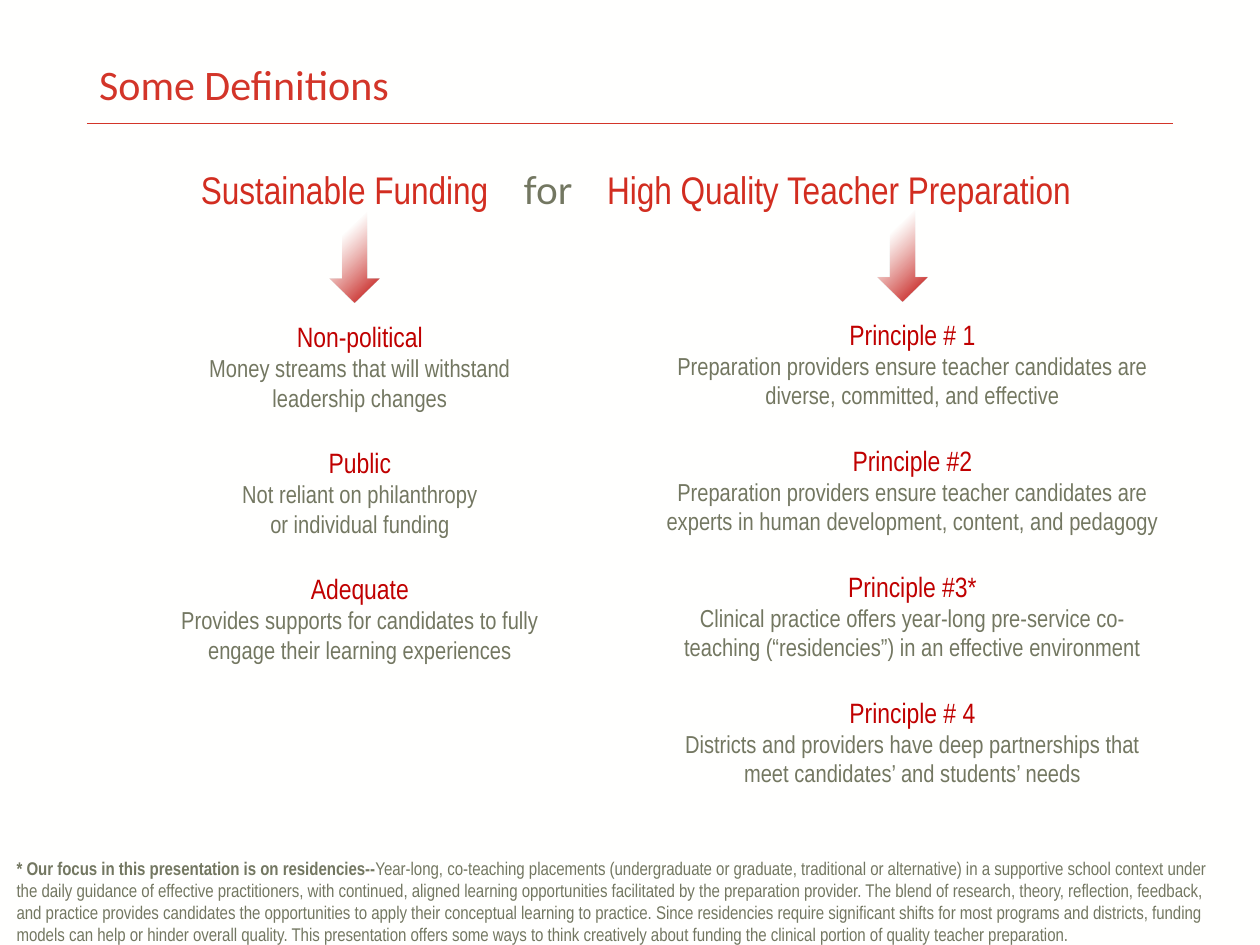
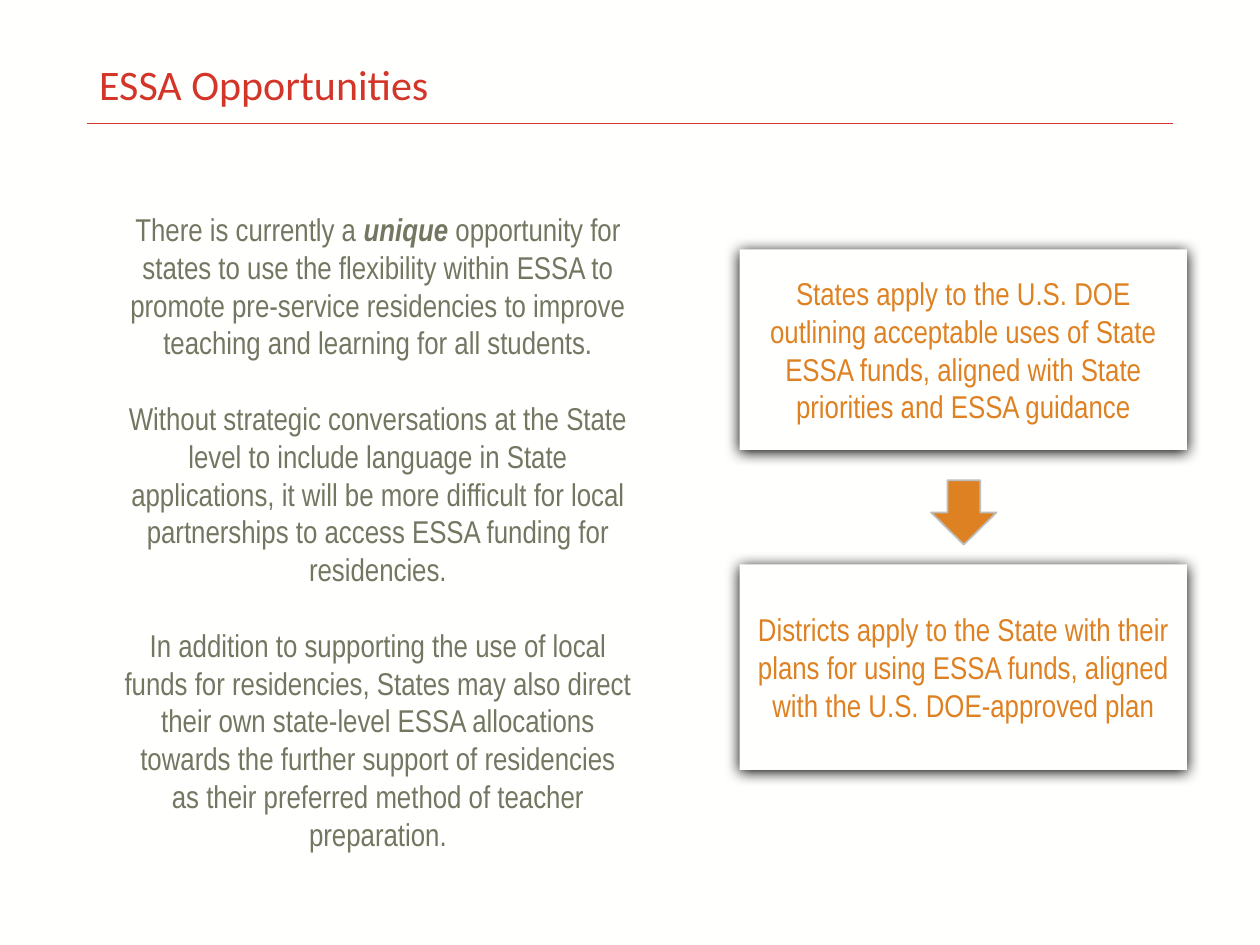
from dataclasses import dataclass
from typing import NamedTuple, Optional

from lxml.etree import SubElement
from pptx import Presentation
from pptx.dml.color import RGBColor
from pptx.enum.shapes import MSO_CONNECTOR, MSO_SHAPE
from pptx.enum.text import MSO_ANCHOR, PP_ALIGN
from pptx.oxml.ns import qn
from pptx.shapes.autoshape import Shape
from pptx.slide import Slide
from pptx.text.text import TextFrame
from pptx.util import Cm, Pt


@dataclass(frozen=True)
class Theme:
    background: RGBColor = RGBColor(0xFF, 0xFF, 0xFE)
    title: RGBColor = RGBColor(0xD3, 0x35, 0x29)
    headline: RGBColor = RGBColor(0xD2, 0x2D, 0x20)
    heading: RGBColor = RGBColor(0xC0, 0x00, 0x00)
    arrow_fade: RGBColor = RGBColor(0xC8, 0x32, 0x27)
    body: RGBColor = RGBColor(0x73, 0x77, 0x61)
    accent: RGBColor = RGBColor(0xDE, 0x81, 0x22)
    outline: RGBColor = RGBColor(0xBD, 0xBD, 0xBC)
    title_font: str = "Calibri"
    body_font: str = "Arial Narrow"
    link_font: str = "Lato"
    title_size: float = 24
    headline_size: float = 22
    large_size: float = 18
    heading_size: float = 16
    detail_size: float = 14
    footnote_size: float = 10.5
    line_height: float = 1.2


THEME = Theme()


class Box(NamedTuple):
    """Left, top, width and height in centimetres."""
    left: float
    top: float
    width: float
    height: float

    def lengths(self) -> tuple[Cm, ...]:
        return tuple(Cm(value) for value in self)


class Span(NamedTuple):
    text: str
    bold: Optional[bool] = None
    italic: Optional[bool] = None
    color: Optional[RGBColor] = None
    font: Optional[str] = None


class Line(NamedTuple):
    spans: tuple[Span, ...]
    size: float
    color: RGBColor
    font: str = THEME.body_font
    align: PP_ALIGN = PP_ALIGN.CENTER
    space_before: float = 0
    spacing: Optional[float] = None
    tabs: tuple[float, ...] = ()


class Topic(NamedTuple):
    heading: str
    details: tuple[str, ...]


class Column(NamedTuple):
    box: Box
    arrow: Box
    topics: tuple[Topic, ...]


class Card(NamedTuple):
    box: Box
    text: str


# Slide content
HEADLINE = Line(
    (Span("Sustainable Funding\t"),
     Span("for\t", color=THEME.body, font=THEME.link_font),
     Span("High Quality Teacher Preparation")),
    THEME.headline_size, THEME.headline, align=PP_ALIGN.LEFT, spacing=0.9, tabs=(6.5, 8.19))

COLUMNS = (
    Column(Box(3.28, 6.32, 7.95, 7.4), Box(6.65, 4.22, 0.99, 1.88), (
        Topic("Non-political", ("Money streams that will withstand leadership changes",)),
        Topic("Public", ("Not reliant on philanthropy", "or individual funding")),
        Topic("Adequate", ("Provides supports for candidates to fully engage their "
                           "learning experiences",)))),
    Column(Box(13.11, 6.27, 10.57, 10), Box(17.7, 4.19, 0.99, 1.88), (
        Topic("Principle # 1", ("Preparation providers ensure teacher candidates are "
                                "diverse, committed, and effective",)),
        Topic("Principle #2", ("Preparation providers ensure teacher candidates are experts "
                               "in human development, content, and pedagogy",)),
        Topic("Principle #3*", ("Clinical practice offers year-long pre-service co-teaching "
                                "(“residencies”) in an effective environment",)),
        Topic("Principle # 4", ("Districts and providers have deep partnerships that meet "
                                "candidates’ and students’ needs",)))))

FOOTNOTE = Line(
    (Span("* Our focus in this presentation is on residencies--", bold=True),
     Span("Year-long, co-teaching placements (undergraduate or graduate, traditional or "
          "alternative) in a supportive school context under the daily guidance of effective "
          "practitioners, with continued, aligned learning opportunities facilitated by the "
          "preparation provider. The blend of research, theory, reflection, feedback, and "
          "practice provides candidates the opportunities to apply their conceptual learning "
          "to practice. Since residencies require significant shifts for most programs and "
          "districts, funding models can help or hinder overall quality. This presentation "
          "offers some ways to think creatively about funding the clinical portion of quality "
          "teacher preparation.")),
    THEME.footnote_size, THEME.body, align=PP_ALIGN.LEFT)

OPPORTUNITIES = (
    (Span("There is currently a "), Span("unique", bold=True, italic=True),
     Span(" opportunity for states to use the flexibility within ESSA to promote pre-service "
          "residencies to improve teaching and learning for all students.")),
    (Span("Without strategic conversations at the State level to include language in State "
          "applications, it will be more difficult for local partnerships to access ESSA "
          "funding for residencies."),),
    (Span("In addition to supporting the use of local funds for residencies, States may also "
          "direct their own state-level ESSA allocations towards the further support of "
          "residencies as their preferred method of teacher preparation."),))

CARDS = (
    Card(Box(14.91, 5.03, 9.02, 4.04),
         "States apply to the U.S. DOE outlining acceptable uses of State ESSA funds, aligned "
         "with State priorities and ESSA guidance"),
    Card(Box(14.91, 11.38, 9.02, 4.14),
         "Districts apply to the State with their plans for using ESSA funds, aligned with the "
         "U.S. DOE-approved plan"))


# Text
def write_lines(frame: TextFrame, lines: list[Line], anchor: MSO_ANCHOR) -> None:
    frame.word_wrap = True
    frame.vertical_anchor = anchor
    for index, line in enumerate(lines):
        paragraph = frame.add_paragraph() if index else frame.paragraphs[0]
        paragraph.alignment = line.align
        if line.spacing:
            paragraph.line_spacing = line.spacing
        if index and line.space_before:
            paragraph.space_before = Pt(line.space_before)
        if line.tabs:
            tab_list = SubElement(paragraph._p.get_or_add_pPr(), qn("a:tabLst"))
            for position in line.tabs:
                SubElement(tab_list, qn("a:tab"), pos=str(Cm(position)), algn="l")
        uniform_font = all(span.font is None for span in line.spans)
        uniform_color = all(span.color is None for span in line.spans)
        paragraph.font.size = Pt(line.size)
        if uniform_font:
            paragraph.font.name = line.font
        if uniform_color:
            paragraph.font.color.rgb = line.color
        for span in line.spans:
            run = paragraph.add_run()
            run.text = span.text
            run.font.bold, run.font.italic = span.bold, span.italic
            if not uniform_font:
                run.font.name = span.font or line.font
            if not uniform_color:
                run.font.color.rgb = span.color or line.color


def add_text(slide: Slide, box: Box, lines: list[Line],
             anchor: MSO_ANCHOR = MSO_ANCHOR.TOP) -> Shape:
    shape = slide.shapes.add_textbox(*box.lengths())
    write_lines(shape.text_frame, lines, anchor)
    return shape


def topic_lines(topics: tuple[Topic, ...]) -> list[Line]:
    gap = THEME.heading_size * THEME.line_height
    lines = []
    for topic in topics:
        lines.append(Line((Span(topic.heading),), THEME.heading_size, THEME.heading,
                          space_before=gap))
        lines += [Line((Span(detail),), THEME.detail_size, THEME.body)
                  for detail in topic.details]
    return lines


# Shapes
def add_filled_shape(slide: Slide, kind: MSO_SHAPE, box: Box, color: RGBColor) -> Shape:
    shape = slide.shapes.add_shape(kind, *box.lengths())
    shape.shadow.inherit = False
    shape.fill.solid()
    shape.fill.fore_color.rgb = color
    shape.line.fill.background()
    return shape


def add_fading_arrow(slide: Slide, box: Box) -> None:
    arrow = add_filled_shape(slide, MSO_SHAPE.DOWN_ARROW, box, THEME.heading)
    arrow.fill.gradient()
    arrow.fill.gradient_angle = 315
    stops = arrow.fill.gradient_stops
    for stop, position, color in zip(stops, (0.27, 1), (THEME.arrow_fade, THEME.heading)):
        stop.position = position
        stop.color.rgb = color
    first_color = next(arrow._element.spPr.iter(qn("a:srgbClr")))
    SubElement(first_color, qn("a:alpha"), val="0")


def add_card(slide: Slide, card: Card) -> None:
    shape = add_filled_shape(slide, MSO_SHAPE.RECTANGLE, card.box, THEME.background)
    effects = shape._element.spPr.find(qn("a:effectLst"))
    shadow = SubElement(effects, qn("a:outerShdw"), blurRad=str(Pt(8.5)), dist=str(Pt(1)),
                        dir="5400000", algn="t", rotWithShape="0")
    SubElement(shadow, qn("a:srgbClr"), val="000000")
    write_lines(shape.text_frame, [Line((Span(card.text),), THEME.large_size, THEME.accent)],
                MSO_ANCHOR.MIDDLE)


# Shared slide frame
def add_titled_slide(presentation: Presentation, title: str) -> Slide:
    slide = presentation.slides.add_slide(presentation.slide_layouts[6])
    slide.background.fill.solid()
    slide.background.fill.fore_color.rgb = THEME.background
    rule = slide.shapes.add_connector(MSO_CONNECTOR.STRAIGHT, Cm(1.75), Cm(2.49),
                                      Cm(23.65), Cm(2.49))
    rule.line.color.rgb = THEME.title
    rule.line.width = Pt(0.75)
    SubElement(rule._element.spPr, qn("a:effectLst"))
    title_line = Line((Span(title),), THEME.title_size, THEME.title, THEME.title_font,
                      PP_ALIGN.LEFT, spacing=0.9)
    add_text(slide, Box(1.75, 1.02, 21.9, 1.47), [title_line], MSO_ANCHOR.MIDDLE)
    return slide


def build_definitions(presentation: Presentation) -> None:
    slide = add_titled_slide(presentation, "Some Definitions")
    headline = add_text(slide, Box(4.05, 3.33, 20, 1.3), [HEADLINE])
    headline.text_frame.margin_left = 0
    for column in COLUMNS:
        add_text(slide, column.box, topic_lines(column.topics))
        add_fading_arrow(slide, column.arrow)
    footnote = add_filled_shape(slide, MSO_SHAPE.ROUNDED_RECTANGLE,
                                Box(0, 17.27, 24.79, 1.78), THEME.background)
    write_lines(footnote.text_frame, [FOOTNOTE], MSO_ANCHOR.MIDDLE)


def build_opportunities(presentation: Presentation) -> None:
    slide = add_titled_slide(presentation, "ESSA Opportunities")
    gap = THEME.large_size * THEME.line_height
    add_text(slide, Box(2.26, 4.11, 10.72, 13.34),
             [Line(spans, THEME.large_size, THEME.body, space_before=gap)
              for spans in OPPORTUNITIES])
    for card in CARDS:
        add_card(slide, card)
    arrow = add_filled_shape(slide, MSO_SHAPE.DOWN_ARROW, Box(18.77, 9.68, 1.32, 1.3),
                             THEME.accent)
    arrow.line.color.rgb = THEME.outline
    arrow.line.width = Pt(1)


def main() -> None:
    presentation = Presentation()
    presentation.slide_width, presentation.slide_height = Cm(25.4), Cm(19.05)
    build_definitions(presentation)
    build_opportunities(presentation)
    presentation.save("out.pptx")


if __name__ == "__main__":
    main()
